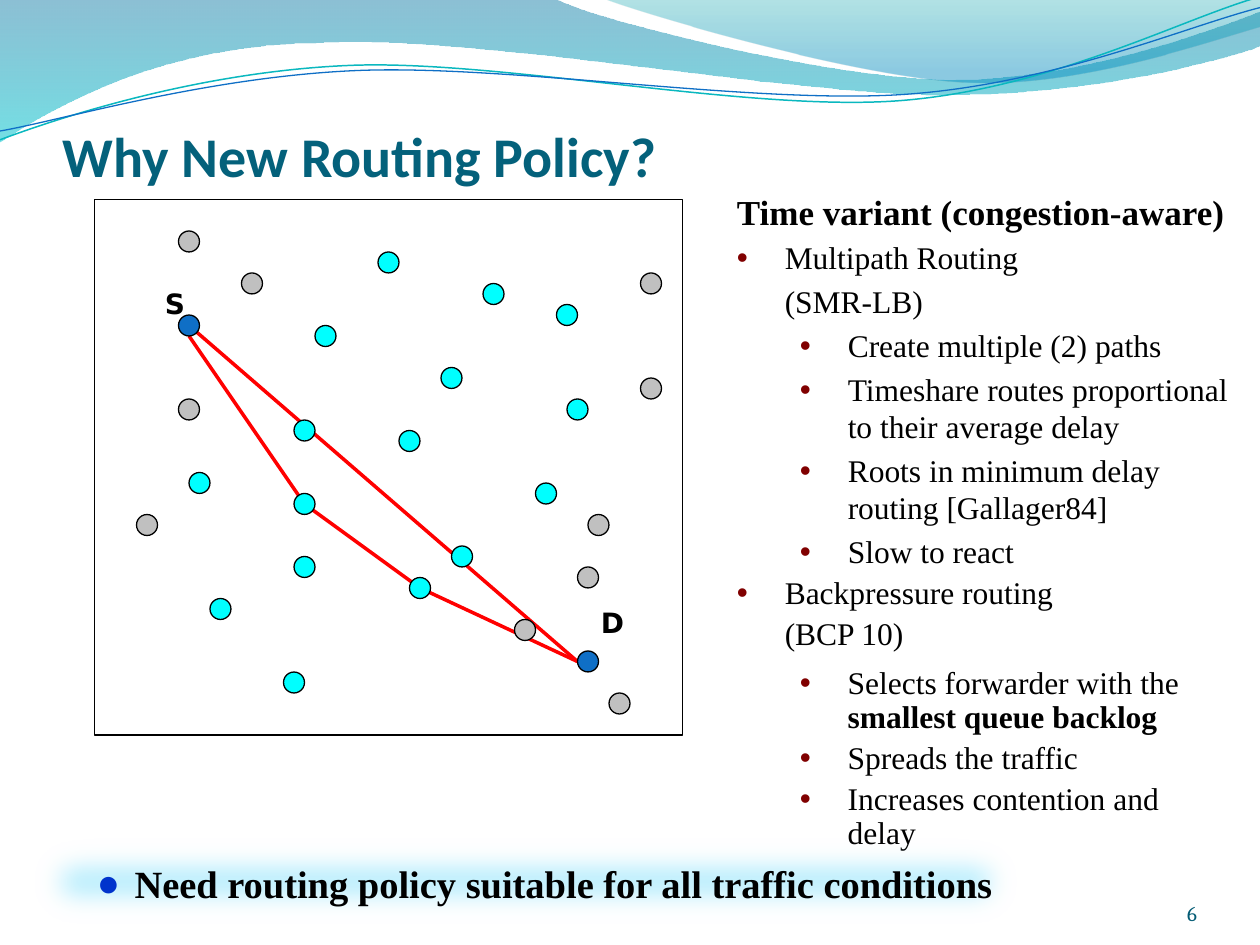
import math
from itertools import pairwise

from lxml import etree
from pptx import Presentation
from pptx.dml.color import RGBColor
from pptx.enum import shapes, text
from pptx.oxml import ns
from pptx.util import Inches, Pt

BLACK = RGBColor(0x00, 0x00, 0x00)
GRAY = RGBColor(0xC0, 0xC0, 0xC0)
CYAN = RGBColor(0x00, 0xFF, 0xFF)
BLUE = RGBColor(0x0F, 0x6F, 0xC6)
RED = RGBColor(0xFF, 0x00, 0x00)
MAROON = RGBColor(0x80, 0x00, 0x00)
ROYAL = RGBColor(0x00, 0x33, 0xCC)
TITLE = RGBColor(0x04, 0x61, 0x7B)
NUMBER = RGBColor(0x04, 0x5C, 0x75)
GLOW = RGBColor(0xB5, 0xED, 0xFD)
TEAL = RGBColor(0x0A, 0xB8, 0xBF)
WAVE_TOP, WAVE_BOTTOM = RGBColor(0x00, 0x74, 0xA1), RGBColor(0x00, 0xC6, 0xCF)
CREST_TOP, CREST_BOTTOM = RGBColor(0x00, 0xA1, 0xA9), RGBColor(0x00, 0x8B, 0xBF)

SERIF = "Times New Roman"
UNIT = 1 / 12
GRAY_NODES = [(52, 7), (14, 7), (40, 40), (49, 47), (46, 35), (47, 30),
              (52, 17), (8, 19), (4, 30), (8, 3)]
CYAN_NODES = [(19, 21), (34, 33), (19, 28), (30, 36), (33, 16), (45, 19),
              (9, 26), (19, 34), (29, 22), (21, 12), (42, 27), (11, 38),
              (18, 45), (27, 5), (37, 8), (44, 10)]
END_NODES = [(8, 11), (46, 43)]
ROUTES = [[(9, 12), (46, 44)], [(9, 13), (20, 29), (31, 37), (46, 44)]]


def add_xml(parent, tag, **attributes):
    """Append a drawing element to parent and return it."""
    return etree.SubElement(parent, ns.qn(tag), attributes)


def place(left, top, width, height):
    """Turn a box in inches into lengths."""
    return [Inches(value) for value in (left, top, width, height)]


def write(frame, content, first=False, size=18, font=SERIF, color=BLACK, bold=False,
          align=None, left=0, hang=0, before=0, spacing=None,
          bullet=None, bullet_color=MAROON):
    """Write one paragraph; content is a string or (string, bold) pairs."""
    para = frame.paragraphs[0] if first else frame.add_paragraph()
    para.alignment = align
    para.space_before = Pt(before)
    para.line_spacing = spacing
    props = para._p.get_or_add_pPr()
    props.set("marL", str(Inches(left)))
    props.set("indent", str(Inches(-hang)))
    if bullet:
        add_xml(add_xml(props, "a:buClr"), "a:srgbClr", val=str(bullet_color))
        add_xml(props, "a:buFont", typeface="Arial")
        add_xml(props, "a:buChar", char=bullet)
    for words, strong in [(content, bold)] if isinstance(content, str) else content:
        span = para.add_run()
        span.text = words
        span.font.size, span.font.name, span.font.bold = Pt(size), font, strong
        span.font.color.rgb = color


def text_frame(page, box, anchor=text.MSO_ANCHOR.TOP, wrap=True, inset=(0.1, 0.05, 0.1, 0.05)):
    """Add a text box and return its frame."""
    frame = page.shapes.add_textbox(*place(*box)).text_frame
    frame.word_wrap, frame.vertical_anchor = wrap, anchor
    frame.margin_left, frame.margin_top, frame.margin_right, frame.margin_bottom = place(*inset)
    return frame


def add_shape(page, kind, box, fill=None, line=None):
    """Add a preset shape with flat fill and thin line."""
    shape = page.shapes.add_shape(kind, *place(*box))
    shape.shadow.inherit = False
    if fill is None:
        shape.fill.background()
    else:
        shape.fill.solid()
        shape.fill.fore_color.rgb = fill
    if line is None:
        shape.line.fill.background()
    else:
        shape.line.color.rgb = line
        shape.line.width = Pt(0.75)
    return shape


def add_curve(page, box, start, *steps, turn=0, closed=False):
    """Draw an outline whose steps are end points or cubic curves, turned in its box."""
    left, top, width, height = place(*box)
    builder = page.shapes.build_freeform(left, top)
    builder.add_line_segments([(left + width, top + height)], close=False)
    shape = builder.convert_to_shape()
    shape.shadow.inherit = False
    shape.rotation = turn
    outline = next(shape._element.iter(ns.qn("a:path")))
    for child in list(outline):
        outline.remove(child)
    cos, sin = math.cos(math.radians(turn)), math.sin(math.radians(turn))
    for index, step in enumerate((start, *steps)):
        kind = "a:moveTo" if index == 0 else "a:lnTo" if len(step) == 2 else "a:cubicBezTo"
        command = add_xml(outline, kind)
        for x, y in zip(step[::2], step[1::2]):
            across = Inches(x) - left - width / 2
            down = Inches(y) - top - height / 2
            add_xml(command, "a:pt",
                    x=str(round(width / 2 + across * cos + down * sin)),
                    y=str(round(height / 2 - across * sin + down * cos)))
    if closed:
        add_xml(outline, "a:close")
    return shape


def add_area(page, box, stops, *outline):
    """Draw a closed outline with a translucent downward gradient."""
    shape = add_curve(page, box, *outline, closed=True)
    shape.line.fill.background()
    shape.fill.gradient()
    shape.fill.gradient_angle = 270
    for stop, (position, color, _) in zip(shape.fill.gradient_stops, stops):
        stop.position, stop.color.rgb = position, color
    colors = list(shape._element.spPr.iter(ns.qn("a:srgbClr")))
    for element, (_, _, opacity) in zip(colors, stops):
        add_xml(element, "a:alpha", val=str(opacity * 1000))


def add_strand(page, box, color, width, *outline):
    """Draw a thin tilted wave line."""
    shape = add_curve(page, box, *outline, turn=357.3)
    shape.fill.background()
    shape.line.color.rgb = color
    shape.line.width = Pt(width)


def add_waves(page):
    """Draw the wave banner across the top."""
    add_area(page, (-0.01, -0.01, 10.02, 1.14), [(0, WAVE_TOP, 45), (1, WAVE_BOTTOM, 55)],
             (0, -0.01), (4.4, -0.01), (4.76, 0.17, 6.64, 0.63, 7.58, 0.63),
             (8.53, 0.63, 9.58, 0.26, 10, 0.09), (10.01, 0.36),
             (9.83, 0.44, 8.7, 0.76, 7.46, 0.75), (6.22, 0.75, 3.82, 0.28, 2.57, 0.34),
             (1.29, 0.35, 0.46, 0.83, -0.01, 1.13), (0, -0.01))
    add_area(page, (4.79, -0.01, 5.21, 0.7), [(0, CREST_TOP, 30), (0.8, CREST_BOTTOM, 45)],
             (4.79, -0.01), (5.09, 0.11, 6.82, 0.62, 7.69, 0.65),
             (8.56, 0.69, 9.61, 0.32, 10, 0.21), (10, 0), (4.79, -0.01))
    add_strand(page, (-0.02, 0.22, 10.02, 0.71), TEAL, 0.85,
               (0, 1.11), (0.48, 0.93, 1.58, 0.57, 2.77, 0.52),
               (3.95, 0.47, 5.93, 0.89, 7.13, 0.8), (8.33, 0.71, 9.38, 0.15, 9.98, -0.02))
    add_strand(page, (-0.02, 0.3, 10.03, 0.58), BLUE, 0.75,
               (0, 1.04), (0.47, 0.96, 1.64, 0.61, 2.83, 0.56),
               (4.03, 0.51, 5.97, 0.83, 7.17, 0.75), (8.36, 0.67, 9.41, 0.21, 10, 0.06))


def add_network(page, box):
    """Draw the framed network with its routes, nodes and end labels."""
    left, top = box[:2]
    for start, end in (leg for route in ROUTES for leg in pairwise(route)):
        ends = [Inches(base + step * UNIT) for point in (start, end)
                for base, step in zip((left, top), point)]
        route = page.shapes.add_connector(shapes.MSO_CONNECTOR.STRAIGHT, *ends)
        route.line.color.rgb = RED
        route.line.width = Pt(2)
        add_xml(route._element.spPr, "a:effectLst")
    add_shape(page, shapes.MSO_SHAPE.RECTANGLE, box, line=BLACK)
    for nodes, color in ((GRAY_NODES, GRAY), (END_NODES, BLUE), (CYAN_NODES, CYAN)):
        for x, y in nodes:
            spot = (left + x * UNIT, top + y * UNIT, 2 * UNIT, 2 * UNIT)
            add_shape(page, shapes.MSO_SHAPE.OVAL, spot, color, BLACK)
    for label, x, y in (("S", 0.46, 0.64), ("D", 3.92, 3.17)):
        frame = text_frame(page, (left + x, top + y, 0.38, 0.37), wrap=False)
        write(frame, label, first=True, size=16, font="DejaVu Sans", bold=True)


def add_policies(page, box):
    """List the time variant routing policies in two aligned blocks."""
    left, top, width, _ = box
    tight = dict(before=3.9, spacing=0.9)
    loose = dict(before=3.9, spacing=0.98)
    item = dict(left=0.38, hang=0.38, bullet="•")
    detail = item | loose | dict(left=0.88)
    frame = text_frame(page, box)
    write(frame, "Time variant (congestion-aware)", first=True, size=20, bold=True, **tight)
    write(frame, "Multipath Routing", **item, **loose)
    write(frame, "(SMR-LB)", left=0.38, **loose)
    for line in ("Create multiple (2) paths",
                 "Timeshare routes proportional to their average delay",
                 "Roots in minimum delay routing [Gallager84]", "Slow to react"):
        write(frame, line, **detail)
    write(frame, "Backpressure routing", **item, **tight)
    write(frame, "(BCP 10)", left=0.38, **tight)
    frame = text_frame(page, (left + 0.5, top + 3.75, width - 0.92, 1.59))
    for index, line in enumerate((
            [("Selects forwarder with the ", False), ("smallest queue backlog", True)],
            "Spreads the traffic", "Increases contention and delay")):
        write(frame, line, first=index == 0, **item, **tight)


def add_conclusion(page, box):
    """Write the conclusion on a soft-edged band."""
    band = add_shape(page, shapes.MSO_SHAPE.RECTANGLE, box, GLOW)
    effects = band._element.spPr.find(ns.qn("a:effectLst"))
    add_xml(effects, "a:softEdge", rad=str(Inches(0.25)))
    frame = band.text_frame
    frame.word_wrap, frame.vertical_anchor = True, text.MSO_ANCHOR.MIDDLE
    frame.margin_top = Inches(0.08)
    write(frame, "Need routing policy suitable for all traffic conditions", first=True,
          size=22, bold=True, align=text.PP_ALIGN.LEFT, left=0.8, hang=0.3,
          bullet="●", bullet_color=ROYAL)


def main():
    """Build and save the slide."""
    deck = Presentation()
    deck.slide_width, deck.slide_height = Inches(10), Inches(7.5)
    page = deck.slides.add_slide(deck.slide_layouts[6])
    add_waves(page)
    title = text_frame(page, (0.5, 0.25, 9, 1.25), text.MSO_ANCHOR.BOTTOM, inset=(0, 0.05, 0, 0))
    write(title, "Why New Routing Policy?", first=True, size=32, font="Calibri",
          color=TITLE, bold=True)
    add_network(page, (0.75, 19 * UNIT, 56 * UNIT, 51 * UNIT))
    add_policies(page, (5.75, 1.5, 4.25, 2.83))
    add_conclusion(page, (0.17, 6.58, 8, 0.83))
    number = text_frame(page, (8.67, 6.95, 0.83, 0.4), text.MSO_ANCHOR.BOTTOM, inset=(0, 0, 0, 0))
    write(number, "6", first=True, size=12, font="Cambria", color=NUMBER,
          align=text.PP_ALIGN.RIGHT)
    deck.save("out.pptx")


if __name__ == "__main__":
    main()
